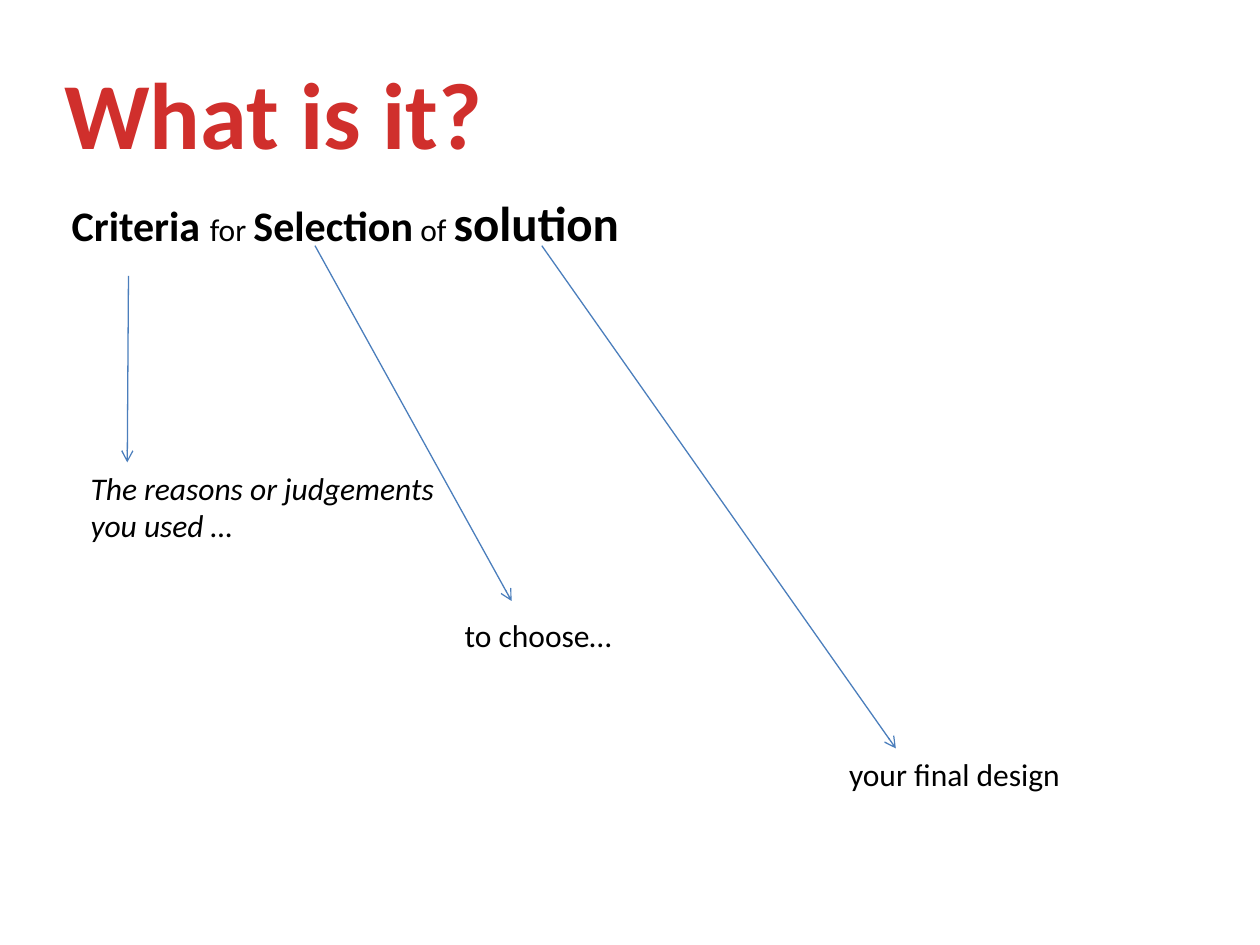
import pptx
import pptx.dml.color
import pptx.enum.shapes
import pptx.enum.text
import pptx.oxml
import pptx.util
from dataclasses import dataclass
from pptx.util import Inches


@dataclass(frozen=True)
class Theme:
    font: str = "Calibri"
    red: str = "D02F2C"
    black: str = "000000"
    blue: str = "4B7EBC"
    title: int = 54
    large: int = 28
    term: int = 24
    body: int = 18
    line: float = 0.75


theme = Theme()


def style(font, size, color=theme.black, bold=False, italic=False):
    font.name = theme.font
    font.size = pptx.util.Pt(size)
    font.bold = bold
    font.italic = italic
    font.color.rgb = pptx.dml.color.RGBColor.from_string(color)


def add_text(left, top, width, height):
    """Add a wrapping text box and return its first paragraph."""
    box = slide.shapes.add_textbox(*map(Inches, (left, top, width, height)))
    box.text_frame.word_wrap = True
    return box.text_frame.paragraphs[0]


deck = pptx.Presentation()
deck.slide_width = Inches(10)
deck.slide_height = Inches(7.5)
slide = deck.slides.add_slide(deck.slide_layouts[6])

# Title
title = add_text(0.39, 0.39, 3.56, 1.01)
title.text = "What is it?"
title.alignment = pptx.enum.text.PP_ALIGN.CENTER
title._parent.word_wrap = False
style(title.font, theme.title, theme.red, bold=True)

# Phrase with its key terms in bold
phrase = add_text(0.47, 1.48, 8.59, 0.57)
for words, size, bold in [
    ("Criteria ", theme.term, True),
    ("for ", theme.body, False),
    ("Selection", theme.term, True),
    (" of ", theme.body, False),
    ("solution", theme.large, True),
]:
    run = phrase.add_run()
    run.text = words
    style(run.font, size, bold=bold)

# Each term's arrow and the meaning it leads to
for ends, place, words, italic in [
    ((1.02, 2.19, 1.01, 3.67), (0.62, 3.67, 3.28, 0.71),
     "The reasons or judgements you used …", True),
    ((2.5, 1.95, 4.06, 4.77), (3.59, 4.84, 2.27, 0.4),
     "to choose…", False),
    ((4.3, 1.95, 7.11, 5.94), (6.64, 5.94, 2.11, 0.4),
     "your final design", False),
]:
    arrow = slide.shapes.add_connector(
        pptx.enum.shapes.MSO_CONNECTOR.STRAIGHT, *map(Inches, ends))
    arrow.line.color.rgb = pptx.dml.color.RGBColor.from_string(theme.blue)
    arrow.line.width = pptx.util.Pt(theme.line)
    head = pptx.oxml.ns.qn("a:tailEnd")
    arrow.line._get_or_add_ln().append(
        pptx.oxml.xmlchemy.OxmlElement("a:tailEnd"))
    arrow.line._get_or_add_ln().find(head).set("type", "arrow")
    arrow._element.spPr.append(pptx.oxml.xmlchemy.OxmlElement("a:effectLst"))

    meaning = add_text(*place)
    meaning.text = words
    style(meaning.font, theme.body, italic=italic)

deck.save("out.pptx")
